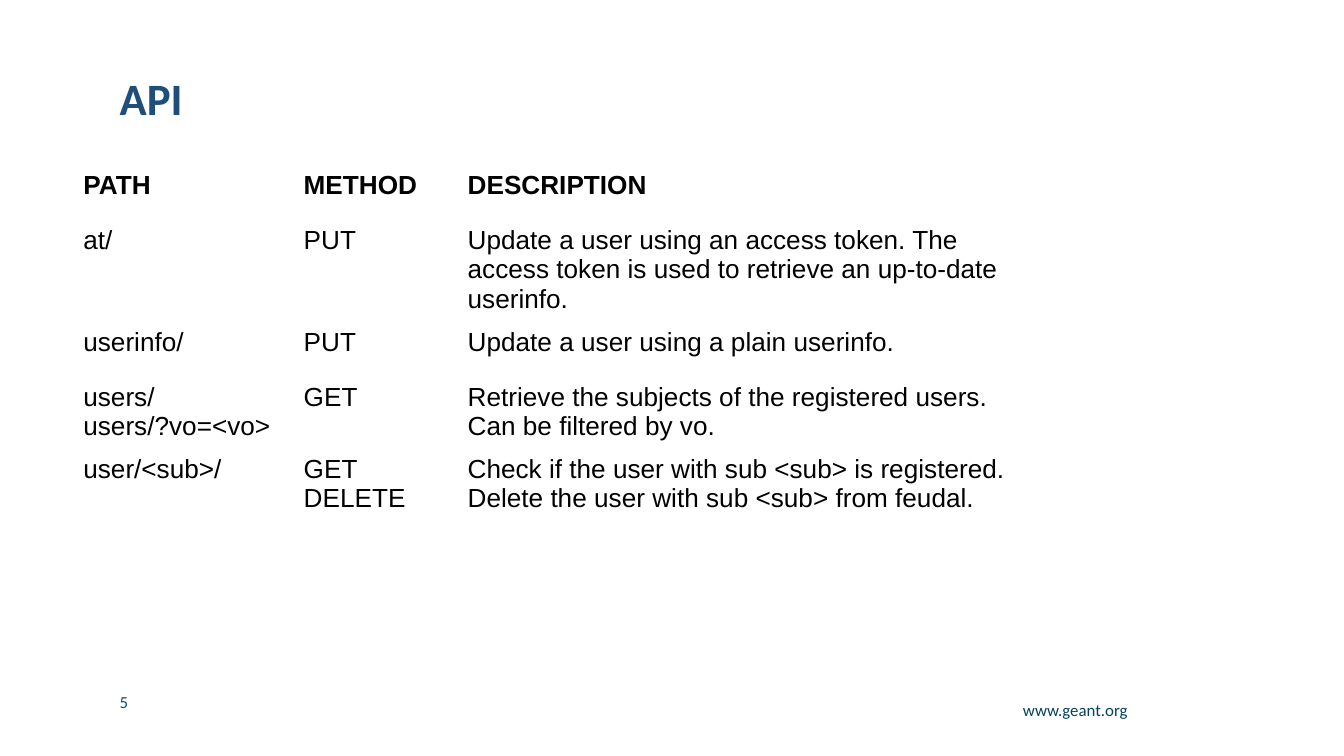
from lxml.etree import SubElement
from pptx import Presentation
from pptx.dml.color import RGBColor
from pptx.enum.text import MSO_ANCHOR as Anchor, PP_ALIGN as Align
from pptx.oxml.ns import qn
from pptx.util import Inches, Pt

# Content
TITLE = "API"
ENDPOINTS = [
    ("PATH", "METHOD", "DESCRIPTION"),
    ("at/", "PUT", "Update a user using an access token. The access token "
                   "is used to retrieve an up-to-date userinfo."),
    ("userinfo/", "PUT", "Update a user using a plain userinfo."),
    ("users/\nusers/?vo=<vo>", "GET",
     "Retrieve the subjects of the registered users. Can be filtered by vo."),
    ("user/<sub>/", "GET\nDELETE",
     "Check if the user with sub <sub> is registered.\n"
     "Delete the user with sub <sub> from feudal."),
]
PAGE_NUMBER = "5"
WEBSITE = "www.geant.org"

# Style and grid, in inches
COLORS = {"title": "1E4E79", "page": "065081", "website": "03435F",
          "text": "000000", "border": "FFFFFF"}
SLIDE_WIDTH = 10
SLIDE_HEIGHT = SLIDE_WIDTH * 9 / 16
COLUMN_WIDTHS = [1.64, 1.22, 4.21]
ROW_HEIGHT = 0.41
TABLE_LEFT, TABLE_TOP = 0.52, 1.22
MARGIN_LEFT = 0.82


def place(shape, left, top, width, height):
    shape.left, shape.top = Inches(left), Inches(top)
    shape.width, shape.height = Inches(width), Inches(height)


def style_text(frame, font_name, size, color, bold=False):
    for paragraph in frame.paragraphs:
        for run in paragraph.runs:
            run.font.name, run.font.size, run.font.bold = font_name, Pt(size), bold
            run.font.color.rgb = RGBColor.from_string(COLORS[color])


def set_insets(frame):
    frame.margin_left = frame.margin_right = Inches(0.07)
    frame.margin_top = frame.margin_bottom = Inches(0.04)
    frame.word_wrap = True


def add_footer(slide, text, box, color, align, spacing):
    frame = slide.shapes.add_textbox(*map(Inches, box)).text_frame
    frame.text = text
    set_insets(frame)
    frame.paragraphs[0].alignment = align
    frame.paragraphs[0].line_spacing = spacing
    style_text(frame, "Calibri", 9, color)


def set_borders(cell, is_header):
    properties = cell._tc.get_or_add_tcPr()
    for position, side in enumerate("LRTB"):
        width = 3 if is_header and side == "B" else 1
        line = SubElement(properties, qn(f"a:ln{side}"), w=str(Pt(width)))
        fill = SubElement(line, qn("a:solidFill"))
        SubElement(fill, qn("a:srgbClr"), val=COLORS["border"])
        properties.insert(position, line)  # borders come before the fill


def add_endpoint_table(slide):
    table = slide.shapes.add_table(
        len(ENDPOINTS), len(COLUMN_WIDTHS), Inches(TABLE_LEFT), Inches(TABLE_TOP),
        Inches(sum(COLUMN_WIDTHS)), Inches(ROW_HEIGHT * len(ENDPOINTS))).table
    table.horz_banding = False
    for column, width in zip(table.columns, COLUMN_WIDTHS):
        column.width = Inches(width)
    for row_index, endpoint in enumerate(ENDPOINTS):
        is_header = row_index == 0
        table.rows[row_index].height = Inches(ROW_HEIGHT)
        for cell, text in zip(table.rows[row_index].cells, endpoint):
            cell.text_frame.text = text
            style_text(cell.text_frame, "Arial", 14, "text", is_header)
            cell.fill.background()
            set_borders(cell, is_header)


def main():
    deck = Presentation()
    deck.slide_width, deck.slide_height = Inches(SLIDE_WIDTH), Inches(SLIDE_HEIGHT)
    slide = deck.slides.add_slide(deck.slide_layouts[5])

    # Title
    title = slide.shapes.title
    place(title, MARGIN_LEFT, 0.58, 8.12, 0.35)
    title.text_frame.text = TITLE
    set_insets(title.text_frame)
    title.text_frame.vertical_anchor = Anchor.MIDDLE
    title.text_frame.paragraphs[0].alignment = Align.LEFT
    title.text_frame.paragraphs[0].line_spacing = 0.9
    style_text(title.text_frame, "Calibri", 24, "title", True)

    # Endpoints
    add_endpoint_table(slide)

    # Footer
    add_footer(slide, PAGE_NUMBER, (MARGIN_LEFT, 5.11, 1.09, 0.23),
               "page", Align.LEFT, 1.0)
    add_footer(slide, WEBSITE, (7.2, 5.18, 1.26, 0.28),
               "website", Align.RIGHT, 0.9)

    deck.save("out.pptx")


if __name__ == "__main__":
    main()
